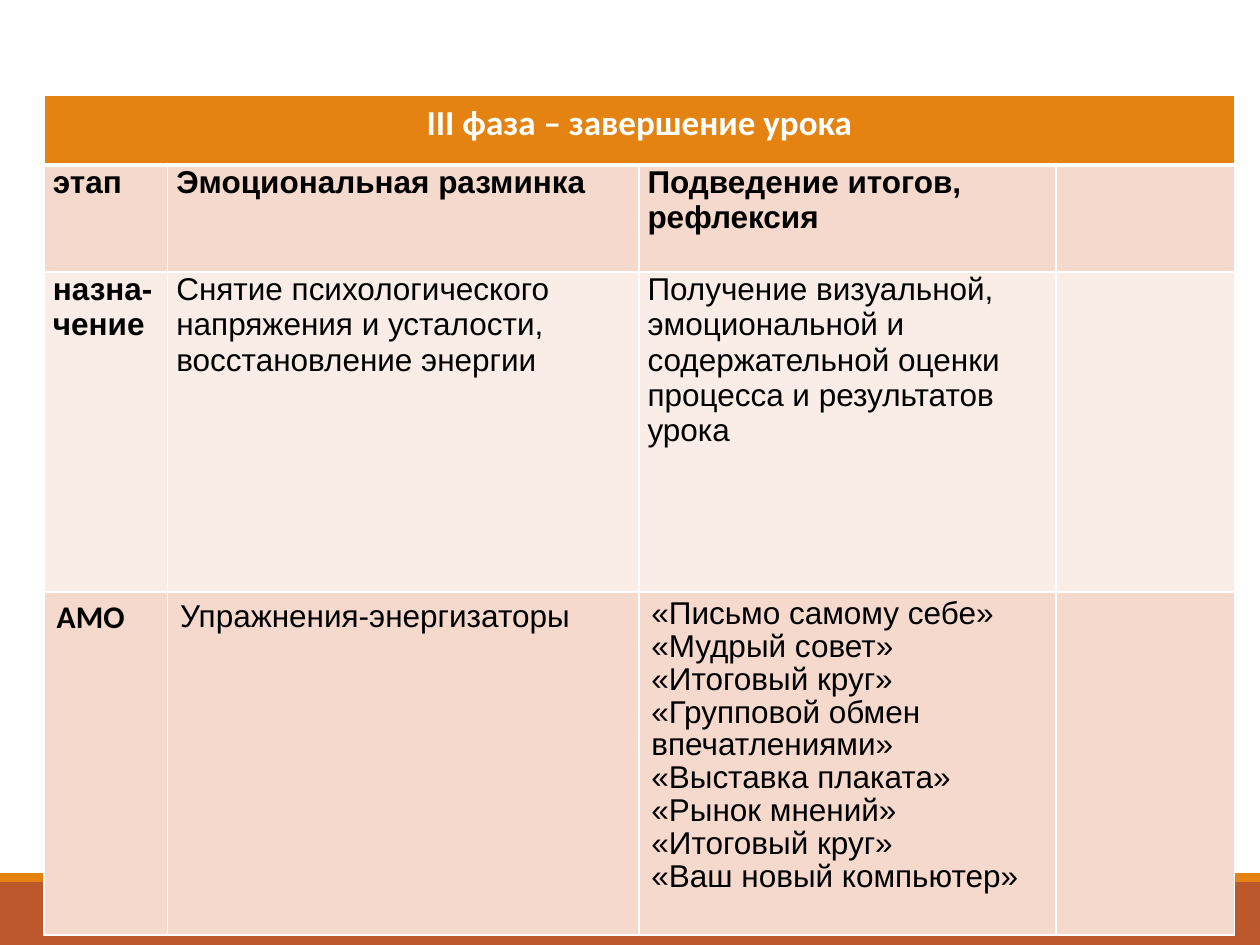
import pptx
import pptx.util
import pptx.dml.color
import pptx.enum.shapes
import pptx.enum.text
import pptx.oxml
import pptx.oxml.ns

Inches, Pt = pptx.util.Inches, pptx.util.Pt

COLORS = {
    "orange": "E48312", "rust": "BD582C", "white": "FFFFFF", "black": "000000",
    "band_dark": "F5D9CC", "band_light": "FAEDE7",
}

# Content: one list of paragraphs per cell
TITLE = "III фаза – завершение урока"
ROWS = [
    [["этап"], ["Эмоциональная разминка"], ["Подведение итогов, рефлексия"], []],
    [
        ["назна-чение"],
        ["Снятие психологического напряжения и усталости, восстановление энергии"],
        ["Получение визуальной,",
         "эмоциональной и содержательной оценки процесса и результатов урока"],
        [],
    ],
    [
        ["АМО"],
        ["Упражнения-энергизаторы"],
        ["«Письмо самому себе»", "«Мудрый совет»", "«Итоговый круг»",
         "«Групповой обмен впечатлениями»", "«Выставка плаката»",
         "«Рынок мнений»", "«Итоговый круг»", "«Ваш новый компьютер»"],
        [],
    ],
]
COLUMN_WIDTHS = [0.98, 3.74, 3.31, 1.42]
ROW_HEIGHTS = [0.55, 0.85, 2.54, 2.72]
FOOTER_BARS = [("rust", 7, 0.5), ("orange", 6.93, 0.07)]


def rgb(name):
    return pptx.dml.color.RGBColor.from_string(COLORS[name])


def set_borders(cell, bottom_width=1):
    properties = cell._tc.get_or_add_tcPr()
    widths = {"lnL": 1, "lnR": 1, "lnT": 1, "lnB": bottom_width}
    for position, (side, width) in enumerate(widths.items()):
        line = pptx.oxml.parse_xml(
            f'<a:{side} {pptx.oxml.ns.nsdecls("a")} w="{Pt(width)}"><a:solidFill>'
            f'<a:srgbClr val="{COLORS["white"]}"/></a:solidFill></a:{side}>')
        properties.insert(position, line)


def style_cell(cell, fill, bottom_width=1):
    cell.fill.solid()
    cell.fill.fore_color.rgb = rgb(fill)
    set_borders(cell, bottom_width)


def write_cell(cell, lines, size=18, font="Arial", bold=False, color="black",
               line_spacing=None, alignment=None):
    cell.text_frame.text = "\n".join(lines)
    for paragraph in cell.text_frame.paragraphs:
        paragraph.alignment = alignment
        paragraph.line_spacing = line_spacing
        for run in paragraph.runs:
            run.font.size = Pt(size)
            run.font.name = font
            run.font.bold = bold
            run.font.color.rgb = rgb(color)


presentation = pptx.Presentation()
presentation.slide_width, presentation.slide_height = Inches(10), Inches(7.5)
slide = presentation.slides.add_slide(presentation.slide_layouts[6])

# Footer bars
for color, top, height in FOOTER_BARS:
    bar = slide.shapes.add_shape(
        pptx.enum.shapes.MSO_SHAPE.RECTANGLE,
        0, Inches(top), presentation.slide_width, Inches(height))
    bar.shadow.inherit = False
    bar.fill.solid()
    bar.fill.fore_color.rgb = rgb(color)
    bar.line.fill.background()

# Table grid
table = slide.shapes.add_table(
    len(ROW_HEIGHTS), len(COLUMN_WIDTHS), Inches(0.35), Inches(0.76),
    Inches(sum(COLUMN_WIDTHS)), Inches(sum(ROW_HEIGHTS))).table
for column, width in zip(table.columns, COLUMN_WIDTHS):
    column.width = Inches(width)
for row, height in zip(table.rows, ROW_HEIGHTS):
    row.height = Inches(height)

# Title row
for cell in table.rows[0].cells:
    style_cell(cell, "orange", bottom_width=3)
title_cell = table.cell(0, 0)
title_cell.merge(table.cell(0, len(COLUMN_WIDTHS) - 1))
write_cell(title_cell, [TITLE], size=20, font="Calibri", bold=True, color="white",
           alignment=pptx.enum.text.PP_ALIGN.CENTER)

# Body rows
last_row = len(ROWS)
for row_index, contents in enumerate(ROWS, start=1):
    for column_index, lines in enumerate(contents):
        cell = table.cell(row_index, column_index)
        style_cell(cell, "band_dark" if row_index % 2 else "band_light")
        if not lines:
            continue
        if row_index < last_row:
            cell.margin_left = cell.margin_right = Inches(0.07)
            cell.margin_top = cell.margin_bottom = 0
        write_cell(
            cell, lines,
            font="Calibri" if (row_index, column_index) == (last_row, 0) else "Arial",
            bold=row_index == 1 or column_index == 0,
            line_spacing=0.93 if len(lines) > 2 else None)

presentation.save("out.pptx")
